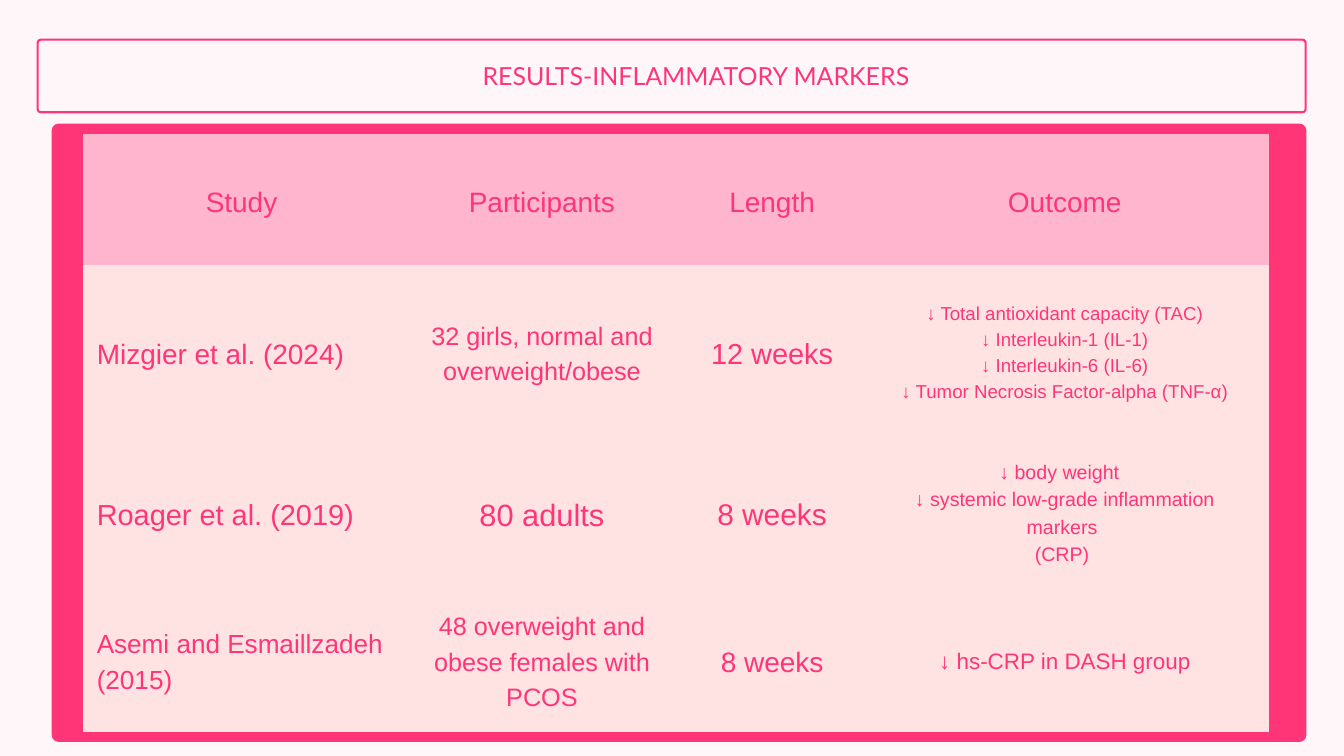
from pptx import Presentation
from pptx import util as u
from pptx.dml.color import RGBColor
from pptx.enum import shapes, text

COLORS = {"page": "FFF6F9", "accent": "FF3578", "header": "FFB5CE", "body": "FFE3E3"}
LEADING = 1.4
CELL_INSET = 0.21
COLUMNS = [4.73, 4.21, 2.64, 6.07]
ROWS = [1.95, 2.55, 2.23, 2.17]
NO_GRID_STYLE = "{2D5ABB26-0587-4C30-8999-92F81FD0307C}"
NBSP = chr(160)  # keeps the word "markers" on its own line

# Each cell: text, size in points
STUDIES = [
    [("Study", 30), ("Participants", 30), ("Length", 30), ("Outcome", 30)],
    [("Mizgier et al. (2024)", 30),
     ("32 girls, normal and overweight/obese", 27),
     ("12 weeks", 31),
     ("↓ Total antioxidant capacity (TAC)\n↓ Interleukin-1 (IL-1)\n"
      "↓ Interleukin-6 (IL-6)\n↓ Tumor Necrosis Factor-alpha (TNF-α)", 20)],
    [("Roager et al. (2019)", 31),
     ("80 adults", 33),
     ("8 weeks", 32),
     ("↓ body weight" + NBSP * 2 + "\n↓ systemic low-grade inflammation markers" + NBSP
      + "\n(CRP)" + NBSP, 21)],
    [("Asemi and Esmaillzadeh (2015)", 28),
     ("48 overweight and obese females with PCOS", 27),
     ("8 weeks", 30),
     ("↓ hs-CRP in DASH group", 24)],
]


def rgb(name):
    return RGBColor.from_string(COLORS[name])


def inches(box):
    return [u.Inches(length) for length in box]


def write(frame, words, size, font, align):
    frame.text = words
    frame.word_wrap = True
    for paragraph in frame.paragraphs:
        paragraph.alignment = align
        paragraph.line_spacing = u.Pt(round(size * LEADING, 1))
        paragraph.space_before = paragraph.space_after = u.Pt(0)
        for run in paragraph.runs:
            run.font.size = u.Pt(size)
            run.font.name = font
            run.font.color.rgb = rgb("accent")


def add_panel(slide, box, radius):
    panel = slide.shapes.add_shape(shapes.MSO_SHAPE.ROUNDED_RECTANGLE, *inches(box))
    panel.adjustments[0] = radius / min(box[2:])
    panel.shadow.inherit = False
    return panel


def add_heading(slide, box):
    # Outlined banner with the title inside
    left, top, width, height = box
    banner = add_panel(slide, box, 0.05)
    banner.fill.background()
    banner.line.color.rgb = rgb("accent")
    banner.line.width = u.Pt(2.25)

    title = slide.shapes.title
    title.left, title.top, title.width, title.height = inches(
        (left + 5.24, top + 0.23, 9.12, 0.52))
    frame = title.text_frame
    frame.margin_left = frame.margin_right = frame.margin_top = frame.margin_bottom = 0
    frame.vertical_anchor = text.MSO_ANCHOR.TOP
    frame.auto_size = text.MSO_AUTO_SIZE.NONE
    write(frame, "RESULTS-INFLAMMATORY MARKERS", 26.7, "Lato", text.PP_ALIGN.CENTER)


def add_results(slide, box):
    # Solid panel behind the table
    left, top, width, height = box
    panel = add_panel(slide, box, 0.1)
    panel.fill.solid()
    panel.fill.fore_color.rgb = rgb("accent")
    panel.line.fill.background()

    # Table of studies
    table_box = (left + 0.46, top + 0.15, sum(COLUMNS), sum(ROWS))
    table = slide.shapes.add_table(len(ROWS), len(COLUMNS), *inches(table_box)).table
    table.horz_banding = False
    table._tbl.tblPr[0].text = NO_GRID_STYLE
    for column, share in zip(table.columns, COLUMNS):
        column.width = u.Inches(share)
    for row, share in zip(table.rows, ROWS):
        row.height = u.Inches(share)

    for r, study in enumerate(STUDIES):
        for c, (words, size) in enumerate(study):
            cell = table.cell(r, c)
            cell.fill.solid()
            cell.fill.fore_color.rgb = rgb("body" if r else "header")
            cell.vertical_anchor = text.MSO_ANCHOR.MIDDLE
            cell.margin_left = cell.margin_right = u.Inches(CELL_INSET)
            cell.margin_top = cell.margin_bottom = u.Inches(CELL_INSET)
            is_name = r > 0 and c == 0
            align = text.PP_ALIGN.LEFT if is_name else text.PP_ALIGN.CENTER
            write(cell.text_frame, words, size, "Arial", align)


def main():
    deck = Presentation()
    deck.slide_width, deck.slide_height = u.Inches(20), u.Inches(11.25)
    slide = deck.slides.add_slide(deck.slide_layouts[5])
    slide.background.fill.solid()
    slide.background.fill.fore_color.rgb = rgb("page")
    add_heading(slide, (0.56, 0.59, 18.87, 1.08))
    add_results(slide, (0.77, 1.84, 18.67, 9.2))
    deck.save("out.pptx")


if __name__ == "__main__":
    main()
